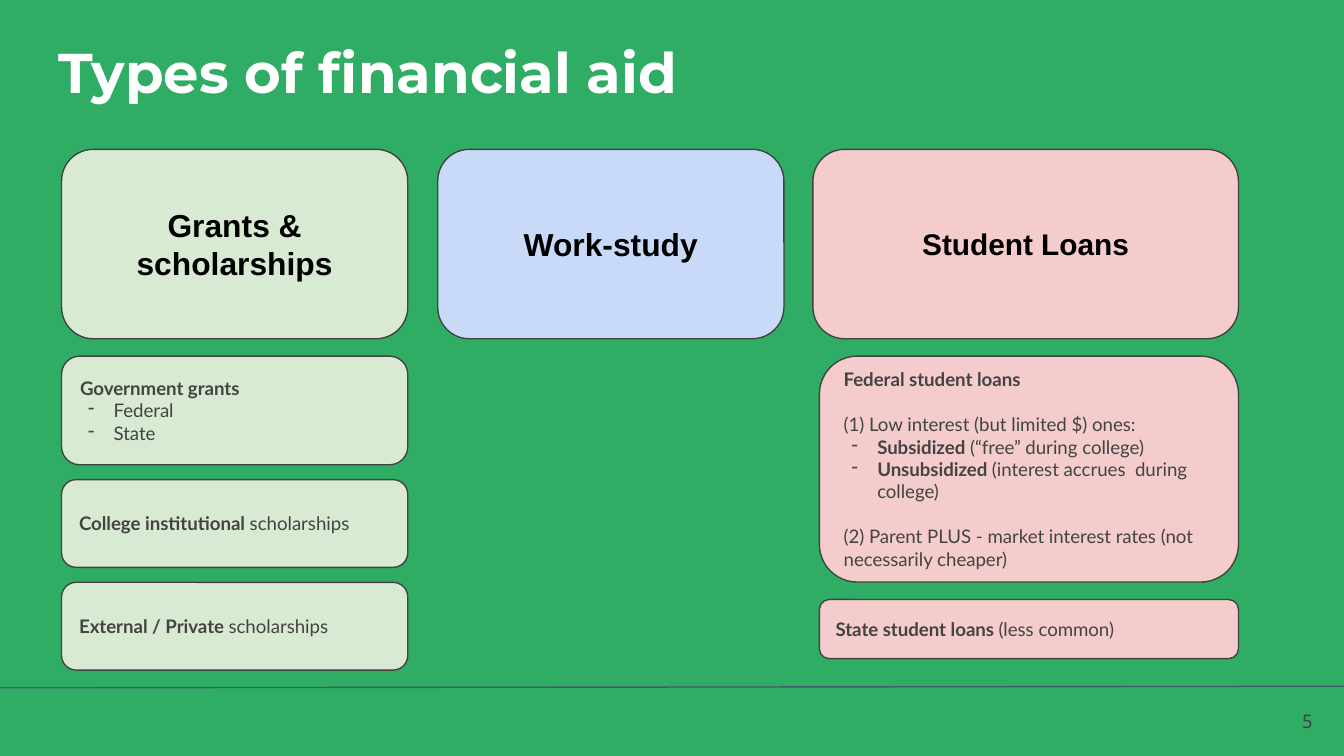
from dataclasses import dataclass

from lxml.etree import SubElement
from pptx import Presentation
from pptx.dml.color import RGBColor
from pptx.enum.shapes import MSO_CONNECTOR, MSO_SHAPE
from pptx.enum.text import MSO_ANCHOR, PP_ALIGN
from pptx.oxml.ns import qn
from pptx.util import Pt


@dataclass(frozen=True)
class Style:
    font: str
    size: float
    color: str
    bold: bool = False


@dataclass(frozen=True)
class Theme:
    background: str = "30AD64"
    rule: str = "455A64"
    outline: str = "424242"
    grants: str = "D9EAD3"
    work: str = "C9DAF8"
    loans: str = "F4CCCC"
    title: Style = Style("Montserrat", 30, "FFFFFF", True)
    heading: Style = Style("Arial", 17, "000000", True)
    loan_heading: Style = Style("Arial", 16, "000000", True)
    body: Style = Style("Lato", 10, "434343")
    number: Style = Style("Noto Sans Mono", 10, "424242")


@dataclass(frozen=True)
class Para:
    strong: str = ""
    plain: str = ""
    bullet: bool = False
    before: float = 0


THEME = Theme()
LINE_WIDTH = 0.75
INSET = 7.2
HEADING_TOP, HEADING_HEIGHT = 80, 101.5
DETAIL_TOP = 190.8


def rgb(color):
    return RGBColor.from_string(color)


def set_font(para, style):
    para.font.name = style.font
    para.font.size = Pt(style.size)
    para.font.color.rgb = rgb(style.color)
    para.font.bold = style.bold


def add_bullet(para, color):
    properties = para._p.get_or_add_pPr()
    properties.set("marL", str(Pt(18)))
    properties.set("indent", str(Pt(-13.7)))
    bullet_color = SubElement(properties, qn("a:buClr"))
    SubElement(bullet_color, qn("a:srgbClr"), val=color)
    SubElement(properties, qn("a:buChar"), char="-")


def prepare_frame(box, anchor):
    frame = box.text_frame
    frame.word_wrap = True
    frame.vertical_anchor = anchor
    frame.margin_left = frame.margin_right = Pt(INSET)
    frame.margin_top = frame.margin_bottom = Pt(INSET)
    return frame


def write_line(box, text, style, align, anchor=MSO_ANCHOR.MIDDLE):
    para = prepare_frame(box, anchor).paragraphs[0]
    para.alignment = align
    set_font(para, style)
    para.add_run().text = text


def write_details(box, details):
    frame = prepare_frame(box, MSO_ANCHOR.MIDDLE)
    for index, detail in enumerate(details):
        para = frame.add_paragraph() if index else frame.paragraphs[0]
        para.alignment = PP_ALIGN.LEFT
        if detail.before:
            para.space_before = Pt(detail.before)
        if detail.bullet:
            add_bullet(para, THEME.body.color)
        set_font(para, THEME.body)
        for text, bold in ((detail.strong, True), (detail.plain, False)):
            if text:
                span = para.add_run()
                span.text = text
                span.font.bold = bold


def add_label(page, left, top, width, height, text, style, align, anchor):
    box = page.shapes.add_textbox(Pt(left), Pt(top), Pt(width), Pt(height))
    write_line(box, text, style, align, anchor)


def add_card(page, left, top, width, height, fill):
    card = page.shapes.add_shape(
        MSO_SHAPE.ROUNDED_RECTANGLE, Pt(left), Pt(top), Pt(width), Pt(height))
    card.shadow.inherit = False
    card.adjustments[0] = 0.167
    card.fill.solid()
    card.fill.fore_color.rgb = rgb(fill)
    card.line.color.rgb = rgb(THEME.outline)
    card.line.width = Pt(LINE_WIDTH)
    return card


def add_heading(page, left, width, fill, text, style):
    card = add_card(page, left, HEADING_TOP, width, HEADING_HEIGHT, fill)
    write_line(card, text, style, PP_ALIGN.CENTER)


def add_stack(page, left, width, gap, fill, cards):
    top = DETAIL_TOP
    for height, details in cards:
        write_details(add_card(page, left, top, width, height, fill), details)
        top += height + gap


def add_rule(page):
    rule = page.shapes.add_connector(
        MSO_CONNECTOR.STRAIGHT, Pt(-1.4), Pt(368.5), Pt(720.7), Pt(367.7))
    rule.line.color.rgb = rgb(THEME.rule)
    rule.line.width = Pt(LINE_WIDTH)
    SubElement(rule._element.spPr, qn("a:effectLst"))


def main():
    deck = Presentation()
    deck.slide_width, deck.slide_height = Pt(720), Pt(405)
    page = deck.slides.add_slide(deck.slide_layouts[6])
    page.background.fill.solid()
    page.background.fill.fore_color.rgb = rgb(THEME.background)

    add_rule(page)
    add_label(page, 24.5, 16.5, 660, 47, "Types of financial aid",
              THEME.title, PP_ALIGN.LEFT, MSO_ANCHOR.BOTTOM)
    add_label(page, 667.5, 374.5, 43, 24, "5",
              THEME.number, PP_ALIGN.RIGHT, MSO_ANCHOR.MIDDLE)

    add_heading(page, 33, 185.5, THEME.grants, "Grants & scholarships", THEME.heading)
    add_heading(page, 234.5, 185.5, THEME.work, "Work-study", THEME.heading)
    add_heading(page, 435.5, 228, THEME.loans, "Student Loans", THEME.loan_heading)

    add_stack(page, 33, 185.5, 8, THEME.grants, [
        (58.2, [Para("Government grants"),
                Para(plain="Federal", bullet=True),
                Para(plain="State", bullet=True)]),
        (47, [Para("College institutional", " scholarships")]),
        (47, [Para("External / Private ", "scholarships")]),
    ])
    add_stack(page, 439, 224.5, 9.4, THEME.loans, [
        (121, [Para("Federal student loans"),
               Para(plain="(1) Low interest (but limited $) ones:", before=12),
               Para("Subsidized", " (“free” during college)", bullet=True),
               Para("Unsubsidized ", "(interest accrues  during college)", bullet=True),
               Para(plain="(2) Parent PLUS - market interest rates "
                          "(not necessarily cheaper)", before=12)]),
        (31.7, [Para("State student loans ", "(less common)")]),
    ])
    deck.save("out.pptx")


if __name__ == "__main__":
    main()
